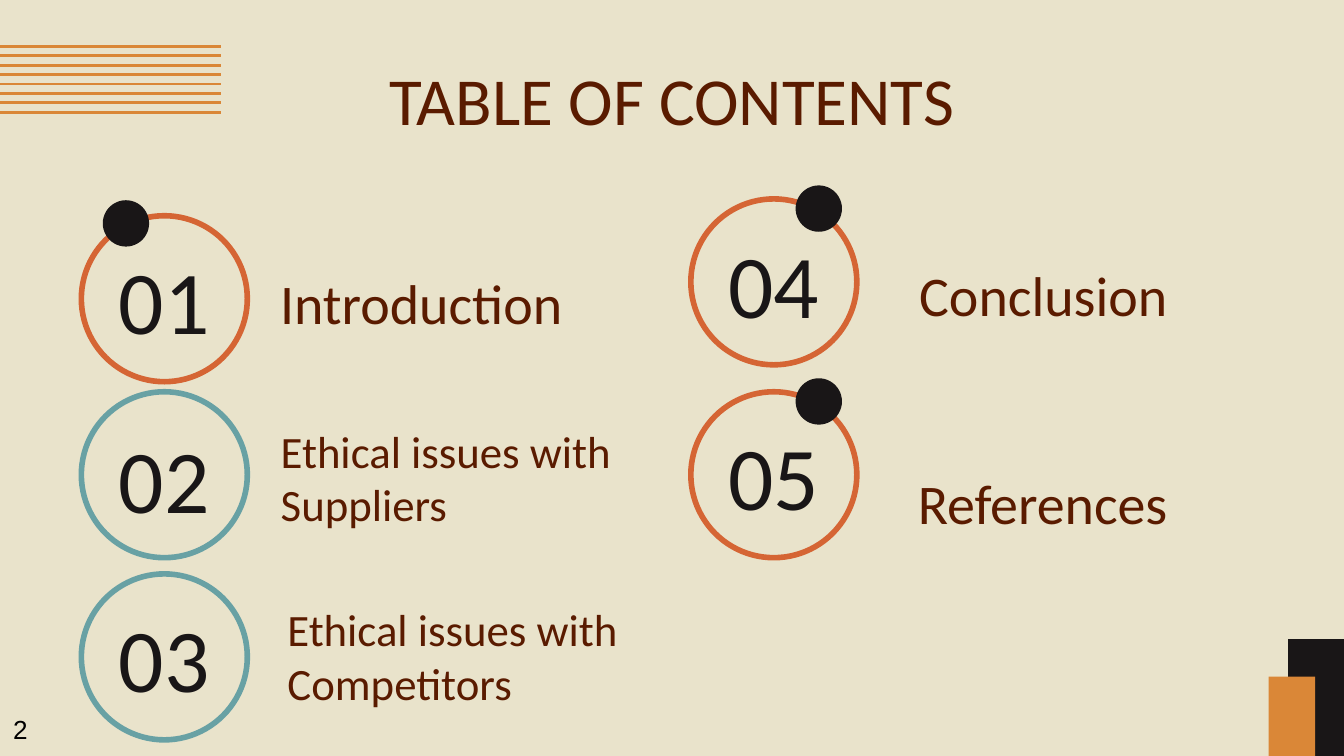
"""Build a table of contents slide with numbered rings and topic labels."""
from lxml.etree import SubElement
from pptx import Presentation
from pptx.dml.color import RGBColor
from pptx.enum.shapes import MSO_CONNECTOR as Connector, MSO_SHAPE as Shape
from pptx.enum.text import MSO_ANCHOR as Anchor, PP_ALIGN as Align
from pptx.oxml.ns import qn
from pptx.util import Inches, Pt

rgb = RGBColor.from_string
BROWN, BLACK, AMBER = "5A1B00", "191617", "DA8737"
ORANGE, TEAL = "D56534", "68A1A4"

deck = Presentation()
deck.slide_width = Inches(10)
deck.slide_height = deck.slide_width * 9 // 16
CELL = deck.slide_width / 100
ROWS = deck.slide_height / CELL
slide = deck.slides.add_slide(deck.slide_layouts[6])
slide.background.fill.solid()
slide.background.fill.fore_color.rgb = rgb("E9E3CB")


def add_text(words, col, row, cols, rows, size, color, align=Align.LEFT,
             anchor=Anchor.TOP, font="Calibri", inset=1):
    box = slide.shapes.add_textbox(*(int(n * CELL) for n in (col, row, cols, rows)))
    frame = box.text_frame
    frame.word_wrap = True
    frame.vertical_anchor = anchor
    frame.margin_left = frame.margin_right = int(CELL)
    frame.margin_top = frame.margin_bottom = int(inset * CELL)
    paragraph = frame.paragraphs[0]
    paragraph.text = words
    paragraph.alignment = align
    paragraph.font.name, paragraph.font.size = font, Pt(size)
    paragraph.font.color.rgb = rgb(color)


def add_figure(kind, col, row, cols, rows, fill=None, outline=None):
    figure = slide.shapes.add_shape(kind, *(int(n * CELL) for n in (col, row, cols, rows)))
    figure.shadow.inherit = False
    if fill:
        figure.fill.solid()
        figure.fill.fore_color.rgb = rgb(fill)
    else:
        figure.fill.background()
    if outline:
        figure.line.color.rgb = rgb(outline)
        figure.line.width = Pt(3)
    else:
        figure.line.fill.background()


for index in range(8):
    height = int((3.45 + 0.7 * index) * CELL)
    stripe = slide.shapes.add_connector(Connector.STRAIGHT, 0, height, int(16.45 * CELL), height)
    stripe.line.color.rgb = rgb(AMBER)
    stripe.line.width = Pt(1.5)
    SubElement(stripe._element.spPr, qn("a:effectLst"))

for col, row, cols, color in [(95.85, 47.55, 4.15, BLACK), (94.4, 50.35, 3.45, AMBER)]:
    add_figure(Shape.RECTANGLE, col, row, cols, ROWS - row, fill=color)

add_text("TABLE OF CONTENTS", 12.9, 3.35, 74.2, 8, 36, BROWN, Align.CENTER)

LEFT, RIGHT = 6.05, 51.4
RING, DOT = 12.35, 3.45
rings = [
    ("01", LEFT, 16.05, 17.3, ORANGE, 1.6, 1.15),
    ("02", LEFT, 29.15, 30.6, TEAL, None, None),
    ("03", LEFT, 42.7, 43.9, TEAL, None, None),
    ("04", RIGHT, 14.8, 16.05, ORANGE, 7.8, 1),
    ("05", RIGHT, 29.15, 30.4, ORANGE, 7.8, 1),
]
for number, col, ring_row, number_row, color, dot_shift, dot_rise in rings:
    add_text(number, col, number_row, RING, 9.9, 48, BLACK, Align.CENTER, Anchor.MIDDLE)
    add_figure(Shape.OVAL, col, ring_row, RING, RING, outline=color)
    if dot_shift:
        add_figure(Shape.OVAL, col + dot_shift, ring_row - dot_rise, DOT, DOT, fill=BLACK)

topics = [
    ("Introduction", 19.85, 16.05, 30, Align.LEFT),
    ("Ethical issues with Suppliers", 19.9, 30.6, 24, Align.LEFT),
    ("Ethical issues with Competitors", 20.4, 43.9, 24, Align.LEFT),
    ("Conclusion ", 58.7, 15.5, 30, Align.RIGHT),
    ("References ", 58.7, 30.95, 30, Align.RIGHT),
]
for topic, col, row, size, align in topics:
    add_text(topic, col, row, 30.1, 9.9, size, BROWN, align, Anchor.BOTTOM)

add_text("2", 0, 52.6, 4.3, 3.4, 14, "000000", font="Arial", inset=0.5)

deck.save("out.pptx")
